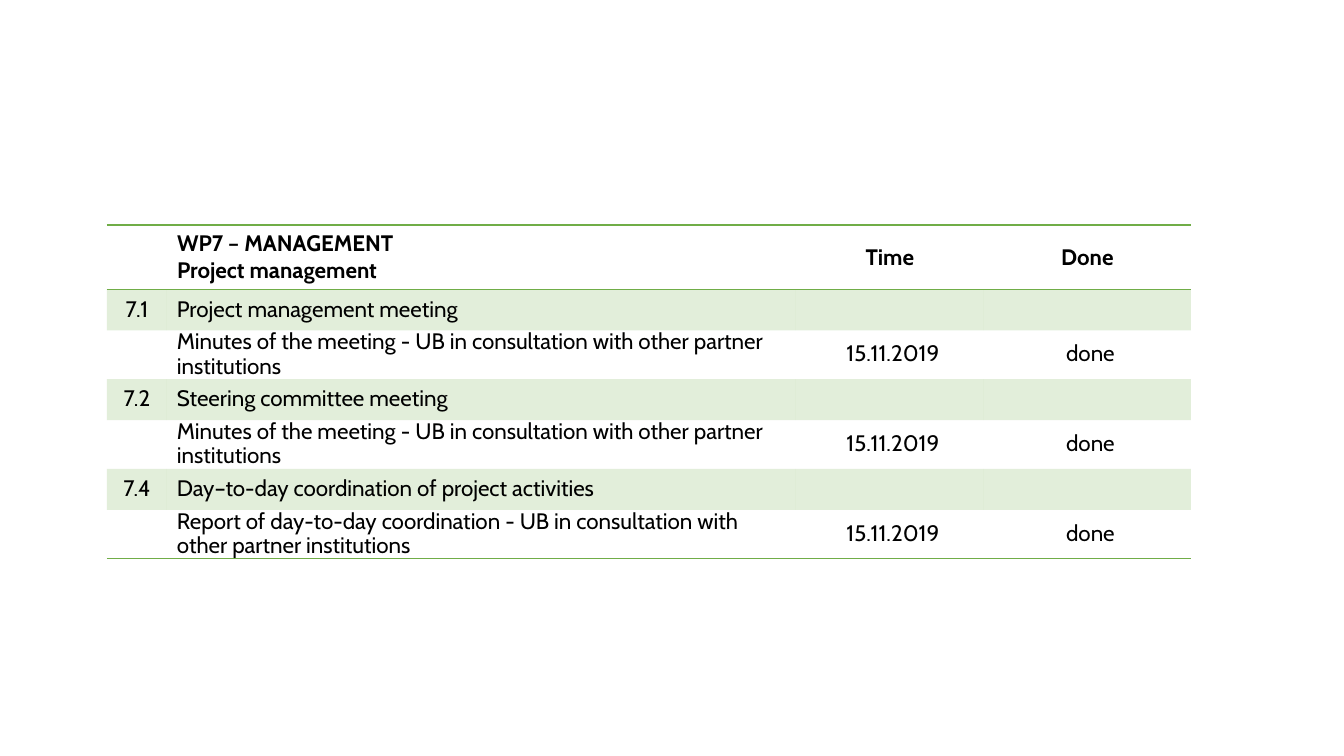
from pptx import Presentation
from pptx.dml.color import RGBColor
from pptx.enum.text import MSO_ANCHOR, PP_ALIGN
from pptx.oxml import parse_xml
from pptx.oxml.ns import nsdecls
from pptx.util import Emu, Pt

GREEN = "70AD47"
BLACK = "000000"
NO_STYLE = "{2D5ABB26-0587-4C30-8999-92F81FD0307C}"
COLUMNS = [60, 629, 188, 207]
ROW_HEIGHT = 41
MINUTES = "Minutes of the meeting - UB in consultation with other partner institutions"
REPORT = "Report of day-to-day coordination - UB in consultation with other partner institutions"
TASKS = [
    ("7.1", "Project management meeting", MINUTES),
    ("7.2", "Steering committee meeting", MINUTES),
    ("7.4", "Day–to-day coordination of project activities", REPORT),
]


def px(n):
    return Emu(round(n * 914400 / 100.8))


def rgb(color):
    return RGBColor.from_string(color)


class Deck:
    font = "Cabin"
    size = 16

    def __init__(self):
        self.prs = Presentation()
        self.prs.slide_width, self.prs.slide_height = px(1344), px(756)
        self.s = self.prs.slides.add_slide(self.prs.slide_layouts[6])

    def table(self, x, y, h, columns, rows):
        frame = self.s.shapes.add_table(
            rows, len(columns), px(x), px(y), px(sum(columns)), px(h))
        table = frame.table
        table.first_row = table.horz_banding = False
        table._tbl.tblPr[0].text = NO_STYLE
        for column, width in zip(table.columns, columns):
            column.width = px(width)
        for row in table.rows:
            row.height = px(ROW_HEIGHT)
        frame.height = px(h)
        return table

    def cell(self, cell, text, center, header=False, band=False):
        cell.vertical_anchor = MSO_ANCHOR.MIDDLE
        if not header:
            cell.margin_left = cell.margin_right = px(4)
            cell.margin_top = cell.margin_bottom = 0
        if band:
            cell.fill.solid()
            cell.fill.fore_color.rgb = rgb(GREEN)
            color = cell._tc.tcPr.find(".//{*}srgbClr")
            color.append(parse_xml(f'<a:alpha {nsdecls("a")} val="20000"/>'))
        else:
            cell.fill.background()
        if not text:
            return
        tf = cell.text_frame
        p = tf.paragraphs[0]
        p.text = text
        p.alignment = PP_ALIGN.CENTER if center else PP_ALIGN.LEFT
        if not header:
            p.line_spacing = 0.9
        for r in p.runs:
            r.font.name = self.font
            r.font.size = Pt(self.size)
            r.font.bold = header
            r.font.color.rgb = rgb(BLACK)

    def indent(self, cell, n):
        pPr = cell.text_frame.paragraphs[0]._p.get_or_add_pPr()
        pPr.set("marL", str(px(n)))
        pPr.set("indent", "0")

    def borders(self, cell, sides):
        for i, side in enumerate(sides):
            cell._tc.get_or_add_tcPr().insert(i, parse_xml(
                f'<a:ln{side} {nsdecls("a")} w="{Pt(1)}"><a:solidFill>'
                f'<a:srgbClr val="{GREEN}"/></a:solidFill></a:ln{side}>'))


def main():
    deck = Deck()
    rows = [("", "WP7 – MANAGEMENT\vProject management", "Time", "Done")]
    for number, task, result in TASKS:
        rows += [(number, task, "", ""), ("", result, "15.11.2019", "done")]
    table = deck.table(107, 225, 332, COLUMNS, len(rows))
    for i, row in enumerate(rows):
        for j, text in enumerate(row):
            cell = table.cell(i, j)
            deck.cell(cell, text, j != 1, header=i == 0, band=i % 2 == 1)
            if i > 0 and j > 0 and text:
                deck.indent(cell, 6)
            if i == 0:
                deck.borders(cell, "TB")
            elif i == len(rows) - 1:
                deck.borders(cell, "B")
    deck.prs.save("out.pptx")


if __name__ == "__main__":
    main()
